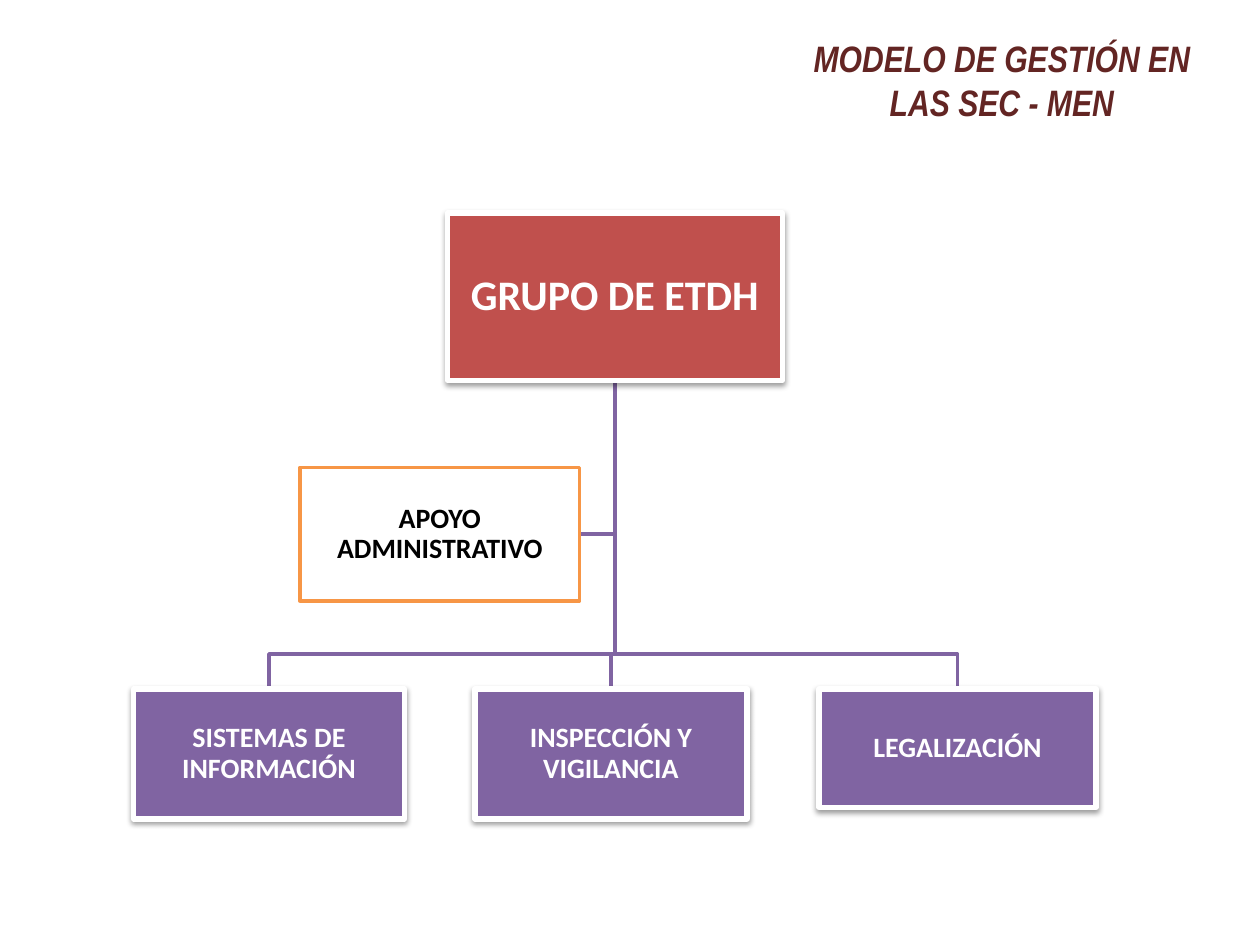
from lxml.etree import SubElement
from pptx import Presentation
from pptx.dml.color import RGBColor
from pptx.enum.shapes import MSO_SHAPE
from pptx.enum.text import MSO_ANCHOR, MSO_AUTO_SIZE, PP_ALIGN
from pptx.oxml.ns import qn
from pptx.util import Pt

WHITE = RGBColor(0xFF, 0xFF, 0xFF)
BLACK = RGBColor(0, 0, 0)
MAROON = RGBColor(0x63, 0x25, 0x23)
RED = RGBColor(0xC0, 0x50, 0x4D)
PURPLE = RGBColor(0x80, 0x64, 0xA2)
ORANGE = RGBColor(0xF7, 0x96, 0x46)


def write(shape, text, size=16, color=WHITE, font="Calibri", italic=False, spacing=0.9, margin=1):
    frame = shape.text_frame
    frame.text = text
    frame.word_wrap = True
    frame.auto_size = MSO_AUTO_SIZE.NONE
    frame.vertical_anchor = MSO_ANCHOR.MIDDLE
    frame.margin_left = frame.margin_right = Pt(margin)
    frame.margin_top = frame.margin_bottom = Pt(margin)
    paragraph = frame.paragraphs[0]
    paragraph.alignment = PP_ALIGN.CENTER
    paragraph.line_spacing = spacing
    span = paragraph.runs[0]
    span.font.name = font
    span.font.size = Pt(size)
    span.font.bold = True
    span.font.italic = italic
    span.font.color.rgb = color


def add_shadow(shape):
    effects = shape._element.spPr.find(qn("a:effectLst"))
    shadow = SubElement(effects, qn("a:outerShdw"), blurRad="40000", dist="20000",
                        dir="5400000", rotWithShape="0")
    color = SubElement(shadow, qn("a:srgbClr"), val="000000")
    SubElement(color, qn("a:alpha"), val="38000")


deck = Presentation()
deck.slide_width, deck.slide_height = Pt(720), Pt(540)
page = deck.slides.add_slide(deck.slide_layouts[5])

title = page.shapes.title
title.left, title.top, title.width, title.height = Pt(445), Pt(20.2), Pt(255), Pt(51)
write(title, "MODELO DE GESTIÓN EN LAS SEC - MEN", size=21, color=MAROON,
      font="Arial Narrow", italic=True, spacing=1.0, margin=4)

trunk_x, trunk_top, branch_y, child_top = 351.4, 217.4, 373.7, 393.8
support_right, support_y = 331.2, 305.2
children = [
    ("SISTEMAS DE INFORMACIÓN", 76.3, 154.8, 74.2),
    ("INSPECCIÓN Y VIGILANCIA", 271.4, 155.5, 74.2),
    ("LEGALIZACIÓN", 468, 158.4, 67.7),
]

routes = [[(trunk_x, support_y), (support_right, support_y)]]
for name, left, width, height in children:
    center = left + width / 2
    routes.append([(trunk_x, branch_y), (center, branch_y), (center, child_top)])
for route in routes:
    builder = page.shapes.build_freeform(Pt(trunk_x), Pt(trunk_top))
    builder.add_line_segments([(Pt(x), Pt(y)) for x, y in route], close=False)
    link = builder.convert_to_shape()
    link.shadow.inherit = False
    link.fill.background()
    link.line.color.rgb = PURPLE
    link.line.width = Pt(2)

boxes = [("GRUPO DE ETDH", 255.6, 121.7, 191.5, 95.7, RED, WHITE, WHITE, 24)]
for name, left, width, height in children:
    boxes.append((name, left, child_top, width, height, PURPLE, WHITE, WHITE, 16))
boxes.append(("APOYO ADMINISTRATIVO", 171.4, 267.1, 159.8, 76.3, WHITE, ORANGE, BLACK, 16))

for name, left, top, width, height, fill, outline, color, size in boxes:
    box = page.shapes.add_shape(MSO_SHAPE.RECTANGLE, Pt(left), Pt(top), Pt(width), Pt(height))
    box.shadow.inherit = False
    box.fill.solid()
    box.fill.fore_color.rgb = fill
    box.line.color.rgb = outline
    box.line.width = Pt(3 if outline == WHITE else 2)
    if outline == WHITE:
        add_shadow(box)
    write(box, name, size=size, color=color)

deck.save("out.pptx")
